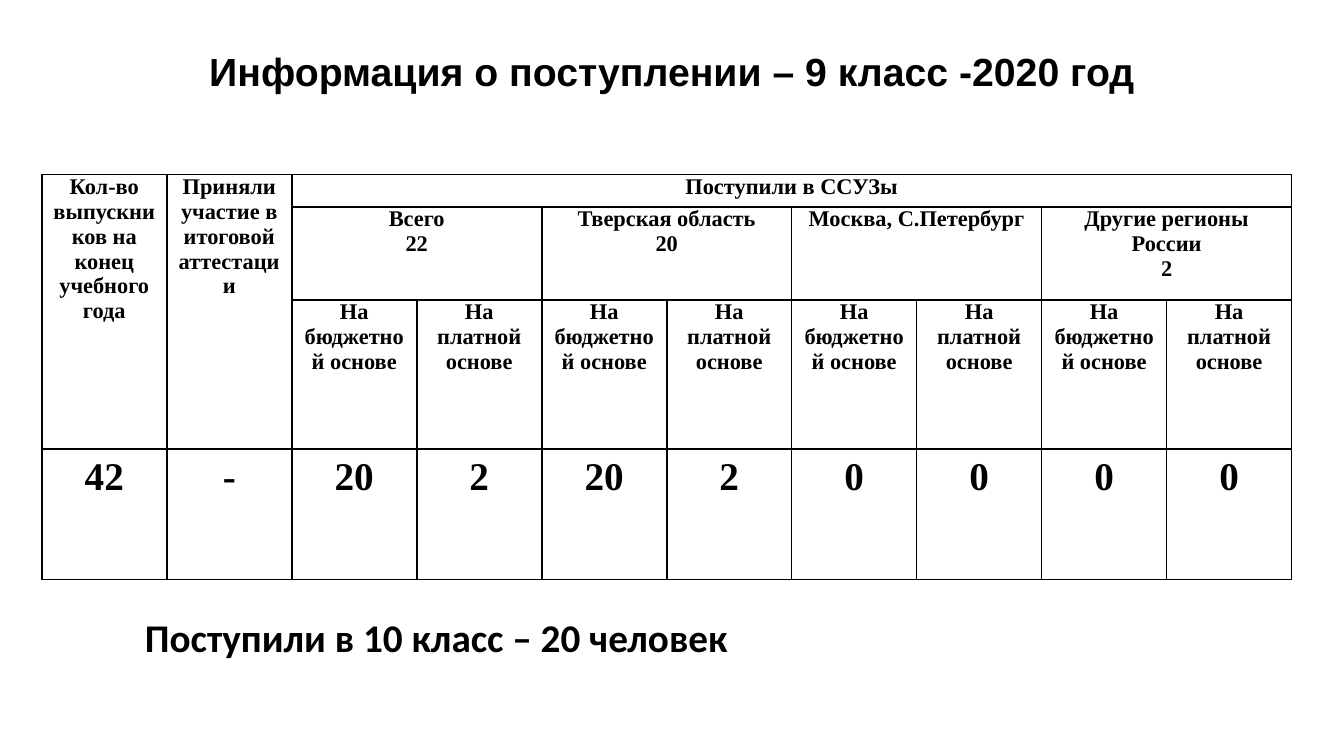
from pptx import Presentation, util as u
from pptx.dml.color import RGBColor
from pptx.enum import text
from pptx.oxml import parse_xml
from pptx.oxml.ns import nsdecls

Cm, Pt = u.Cm, u.Pt
COLORS = {"ink": "000000", "paper": "FFFFFF"}
TITLE = "Информация о поступлении – 9 класс -2020 год"
NOTE = "Поступили в 10 класс – 20 человек"
LEFT_HEADS = ["Кол-во выпускников на конец учебного года",
              "Приняли участие в итоговой аттестации"]
REGIONS = [["Всего", "22"], ["Тверская область", "20"],
           ["Москва, С.Петербург"], ["Другие регионы России", "2"]]
BASES = ["На бюджетной основе", "На платной основе"]
VALUES = ["42", "-", "20", "2", "20", "2", "0", "0", "0", "0"]
ROW_HEIGHTS = [0.61, 1.76, 2.41, 2.46]


def add_run(p, words, font, size):
    """Add one bold run in the ink colour."""
    r = p.add_run()
    r.text = words
    r.font.name, r.font.size, r.font.bold = font, Pt(size), True
    r.font.color.rgb = RGBColor.from_string(COLORS["ink"])


def add_title(slide, x, y, w, h):
    """Place and fill the title placeholder."""
    sp = slide.shapes.title
    sp.left, sp.top, sp.width, sp.height = Cm(x), Cm(y), Cm(w), Cm(h)
    tf = sp.text_frame
    tf.vertical_anchor = text.MSO_ANCHOR.MIDDLE
    tf.auto_size = text.MSO_AUTO_SIZE.NONE
    tf.paragraphs[0].alignment = text.PP_ALIGN.CENTER
    add_run(tf.paragraphs[0], TITLE, "Arial", 21)


def style_cell(cell):
    """Give a cell its insets, black borders and white fill."""
    cell.margin_left = cell.margin_right = Cm(0.19)
    cell.margin_top = cell.margin_bottom = 0
    cell.fill.solid()
    cell.fill.fore_color.rgb = RGBColor.from_string(COLORS["paper"])
    tcPr = cell._tc.get_or_add_tcPr()
    for i, side in enumerate(("lnL", "lnR", "lnT", "lnB")):
        tcPr.insert(i, parse_xml(
            f'<a:{side} {nsdecls("a")} w="{Pt(1)}"><a:solidFill>'
            f'<a:srgbClr val="{COLORS["ink"]}"/></a:solidFill></a:{side}>'))


def fill_cell(cell, lines, size=12, spacing=None):
    """Write centred lines into a cell, one paragraph each."""
    tf = cell.text_frame
    for i, line in enumerate(lines):
        p = tf.add_paragraph() if i else tf.paragraphs[0]
        p.alignment = text.PP_ALIGN.CENTER
        p.line_spacing = spacing
        add_run(p, line, "Times New Roman", size)


def add_admissions_table(slide, x, y, w):
    """Build the admissions table with its three header rows."""
    table = slide.shapes.add_table(len(ROW_HEIGHTS), len(VALUES), Cm(x), Cm(y),
                                   Cm(w), Cm(sum(ROW_HEIGHTS))).table
    table.first_row = table.horz_banding = False
    for row, height in zip(table.rows, ROW_HEIGHTS):
        row.height = Cm(height)
    for col in table.columns:
        col.width = Cm(w / len(VALUES))
    for cell in table.iter_cells():
        style_cell(cell)
    for c, head in enumerate(LEFT_HEADS):
        table.cell(0, c).merge(table.cell(2, c))
        fill_cell(table.cell(0, c), [head])
    table.cell(0, 2).merge(table.cell(0, 9))
    fill_cell(table.cell(0, 2), ["Поступили в ССУЗы"])
    for i, region in enumerate(REGIONS):
        c = 2 + 2 * i
        table.cell(1, c).merge(table.cell(1, c + 1))
        fill_cell(table.cell(1, c), region)
        for j, basis in enumerate(BASES):
            fill_cell(table.cell(2, c + j), [basis])
    for c, value in enumerate(VALUES):
        cell = table.cell(3, c)
        cell.margin_left = cell.margin_right = Cm(0.15)
        fill_cell(cell, [value], 21, 1.15)


def add_note(slide, x, y, w, h):
    """Add the line about the tenth form."""
    tf = slide.shapes.add_textbox(Cm(x), Cm(y), Cm(w), Cm(h)).text_frame
    tf.word_wrap = True
    tf.auto_size = text.MSO_AUTO_SIZE.SHAPE_TO_FIT_TEXT
    add_run(tf.paragraphs[0], NOTE, "Calibri", 21)


def main():
    """Build and save the slide."""
    prs = Presentation()
    prs.slide_width, prs.slide_height = Cm(25.4), Cm(14.29)
    slide = prs.slides.add_slide(prs.slide_layouts[5])
    add_title(slide, 1.27, 0.58, 22.86, 1.52)
    add_admissions_table(slide, 0.79, 3.3, 23.62)
    add_note(slide, 2.49, 11.46, 14, 1.14)
    prs.save("out.pptx")


if __name__ == "__main__":
    main()
